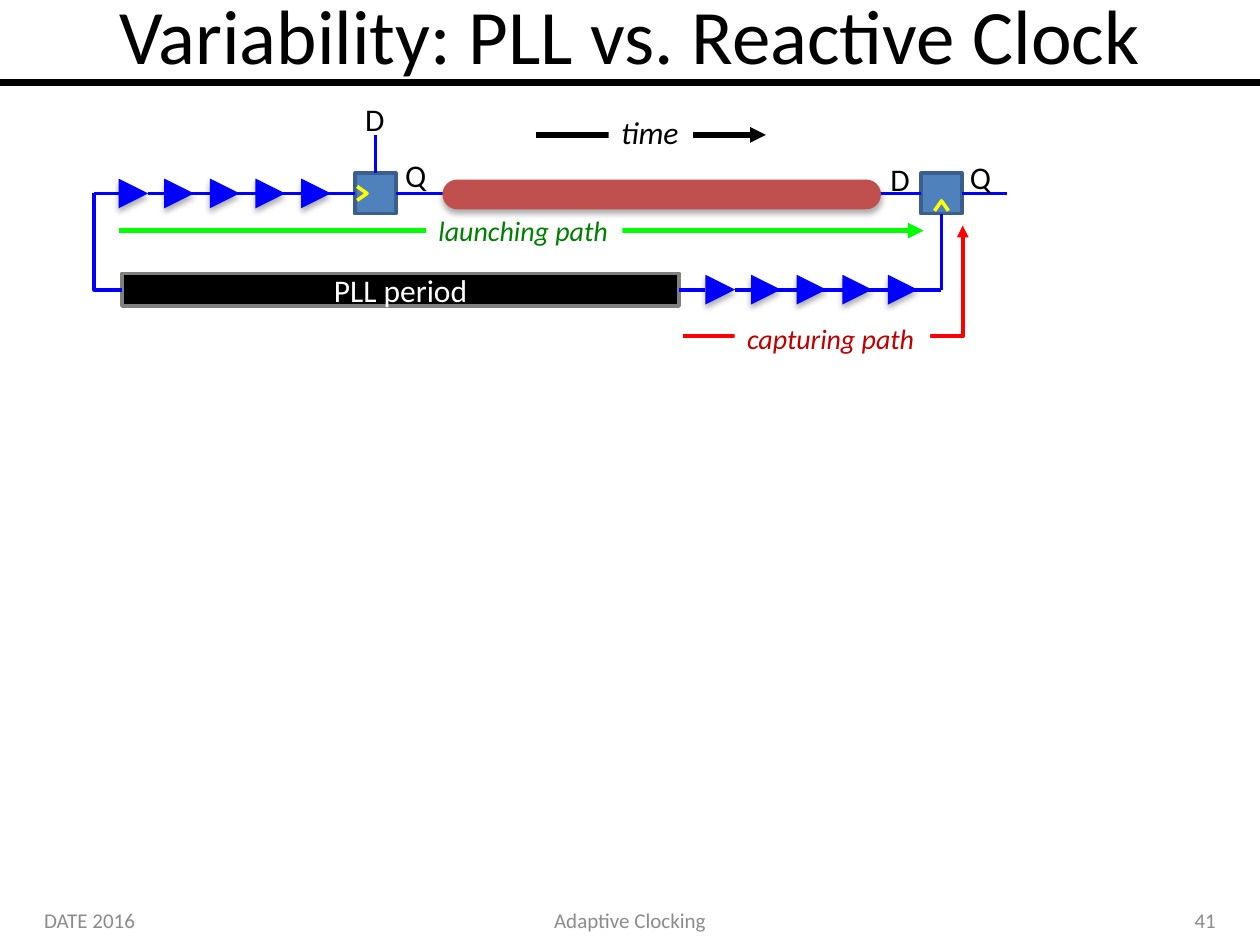
from pptx import Presentation
from pptx.dml.color import RGBColor
from pptx.enum.shapes import MSO_CONNECTOR, MSO_SHAPE
from pptx.enum.text import MSO_ANCHOR, PP_ALIGN
from pptx.oxml.ns import qn
from pptx.util import Cm, Pt
from lxml.etree import SubElement

BLUE, BLACK, WHITE, GREY = "0000FF", "000000", "FFFFFF", "8C8C8C"
BUFFER, PITCH, FLOP = 0.6, 0.92, 0.82


def rgb(color):
    return RGBColor.from_string(color)


def write(sp, text, size, color, align=PP_ALIGN.LEFT, italic=False, wrap=True,
          anchor=MSO_ANCHOR.MIDDLE):
    tf = sp.text_frame
    tf.word_wrap = wrap
    tf.vertical_anchor = anchor
    p = tf.paragraphs[0]
    p.text = text
    p.alignment = align
    p.font.name, p.font.size, p.font.italic = "Calibri", Pt(size), italic
    p.font.color.rgb = rgb(color)


def add_text(s, x, y, w, h, text, size, color, **style):
    sp = s.shapes.add_textbox(Cm(x), Cm(y), Cm(w), Cm(h))
    write(sp, text, size, color, **style)
    return sp


def add_label(s, x, y, w, h, text, size=18, color=BLACK, italic=False):
    return add_text(s, x, y, w, h, text, size, color, italic=italic, wrap=False,
                    anchor=MSO_ANCHOR.TOP)


def add_box(s, kind, x, y, w, h, fill, line=None, shadow=False):
    sp = s.shapes.add_shape(kind, Cm(x), Cm(y), Cm(w), Cm(h))
    sp.shadow.inherit = False
    sp.fill.solid()
    sp.fill.fore_color.rgb = rgb(fill)
    if line:
        sp.line.color.rgb = rgb(line)
        sp.line.width = Pt(2)
    else:
        sp.line.fill.background()
    if shadow:
        effects = sp._element.spPr.find(qn("a:effectLst"))
        outer = SubElement(effects, qn("a:outerShdw"), blurRad=str(Pt(3.5)),
                           dist=str(Pt(2.2)), dir="5400000", rotWithShape="0")
        clr = SubElement(outer, qn("a:srgbClr"), val=BLACK)
        SubElement(clr, qn("a:alpha"), val="32000")
    return sp


def add_line(s, x1, y1, x2, y2, color=BLUE, width=2.25, arrow=False, bent=False):
    kind = MSO_CONNECTOR.ELBOW if bent else MSO_CONNECTOR.STRAIGHT
    c = s.shapes.add_connector(kind, Cm(x1), Cm(y1), Cm(x2), Cm(y2))
    c.line.color.rgb = rgb(color)
    c.line.width = Pt(width)
    spPr = c._element.spPr
    if bent:
        spPr.find(qn("a:prstGeom")).set("prst", "bentConnector2")
    if arrow:
        SubElement(c.line._get_or_add_ln(), qn("a:tailEnd"), type="triangle")
    SubElement(spPr, qn("a:effectLst"))
    return c


def add_wire(s, sp, site, x, y, bent=False):
    c = add_line(s, x, y, x, y, bent=bent)
    c.begin_connect(sp, site)
    return c


def add_arrow(s, start, end, label, text, size, color, text_color, width=3, bent=False):
    add_line(s, *start, *end, color, width, arrow=True, bent=bent)
    sp = add_label(s, *label, text, size, text_color, italic=True)
    sp.fill.solid()
    sp.fill.fore_color.rgb = rgb(WHITE)


def add_buffers(s, x, mid):
    for i in range(5):
        sp = add_box(s, MSO_SHAPE.ISOSCELES_TRIANGLE, x + i * PITCH, mid - BUFFER / 2,
                     BUFFER, BUFFER, BLUE, shadow=True)
        sp.rotation = 90


def add_flop(s, x, y, clock):
    sp = add_box(s, MSO_SHAPE.RECTANGLE, x, y, FLOP, FLOP, "4F81BD", "3A5F8C")
    points = [(Cm(x + dx), Cm(y + dy)) for dx, dy in clock]
    fb = s.shapes.build_freeform(*points[0], scale=1.0)
    fb.add_line_segments(points[1:], close=False)
    mark = fb.convert_to_shape()
    mark.shadow.inherit = False
    mark.fill.background()
    mark.line.color.rgb = rgb("FFFF00")
    mark.line.width = Pt(2)
    return sp


def add_header(s, x, y, w, h):
    add_line(s, x, y + h, x + w, y + h, BLACK, 4)
    add_text(s, x + 1.27, y - 0.28, w - 2.54, 1.92, "Variability: PLL vs. Reactive Clock",
             44, BLACK, align=PP_ALIGN.CENTER)


def add_footer(s, x, y, w, h):
    side, middle = 5.92, 8.05
    parts = [(x, side, "DATE 2016", PP_ALIGN.LEFT),
             (x + (w - middle) / 2, middle, "Adaptive Clocking", PP_ALIGN.CENTER),
             (x + w - side, side, "41", PP_ALIGN.RIGHT)]
    for left, width, text, align in parts:
        add_text(s, left, y, width, h, text, 12, GREY, align=align)


def add_launching(s, x, y, w, h):
    mid = y + 2
    top = mid - FLOP / 2
    add_arrow(s, (x + 0.49, y + h), (x + 16.72, y + h),
              (x + 6.69, y + h - 0.46, 3.96, 0.94), "launching path", 16, "00FF00", "008000")
    add_arrow(s, (x + 8.9, y + 0.82), (x + 13.54, y + 0.82),
              (x + 10.37, y + 0.26, 1.7, 1.02), "time", 18, BLACK, BLACK)
    launch = add_flop(s, x + 5.26, top, [(0.04, 0.27), (0.24, 0.41), (0.04, 0.55)])
    capture = add_flop(s, x + w - 1.73, top, [(0.27, 0.76), (0.41, 0.56), (0.55, 0.76)])
    add_wire(s, launch, 1, x + 1.09, mid)
    add_wire(s, launch, 0, x + 5.67, y + 0.82)
    add_wire(s, launch, 3, x, mid).end_connect(capture, 1)
    add_wire(s, capture, 3, x + w, mid)
    add_line(s, x, mid, x + 0.49, mid)
    add_buffers(s, x + 0.49, mid)
    pill = add_box(s, MSO_SHAPE.ROUNDED_RECTANGLE, x + 7.02, mid - 0.28, 8.84, 0.6,
                   "C0504D", shadow=True)
    pill.adjustments[0] = 0.5
    for dx, dy, text in [(5.21, 0, "D"), (6.02, 1.12, "Q"), (15.8, 1.2, "D"), (17.4, 1.17, "Q")]:
        add_label(s, x + dx, y + dy, 0.92, 1.02, text)
    return capture


def add_capturing(s, x, y, w, h, capture):
    mid = y + h / 2
    pll = add_box(s, MSO_SHAPE.RECTANGLE, x + 0.56, y, 11.23, h, BLACK, "808080")
    write(pll, "PLL period", 18, WHITE, align=PP_ALIGN.CENTER)
    add_wire(s, pll, 1, x, y - 1.61, bent=True)
    add_wire(s, pll, 3, x + 12.32, mid)
    add_line(s, x + 12.91, mid, x + w, mid)
    add_wire(s, capture, 2, x + w, mid)
    add_buffers(s, x + 12.32, mid)
    add_arrow(s, (x + 11.87, y + 1.27), (x + w + 0.43, y - 0.96),
              (x + 12.91, y + 0.84, 3.94, 0.94), "capturing path", 16,
              "FF0000", "C00000", 2.25, bent=True)


def main():
    prs = Presentation()
    prs.slide_width, prs.slide_height = Cm(25.4), Cm(19.05)
    s = prs.slides.add_slide(prs.slide_layouts[6])
    add_header(s, 0, 0, 25.4, 1.66)
    add_footer(s, 0.64, 18.03, 24.12, 1.02)
    capture = add_launching(s, 1.9, 1.9, 18.4, 2.75)
    add_capturing(s, 1.9, 5.51, 17.08, 0.66, capture)
    prs.save("out.pptx")


if __name__ == "__main__":
    main()
